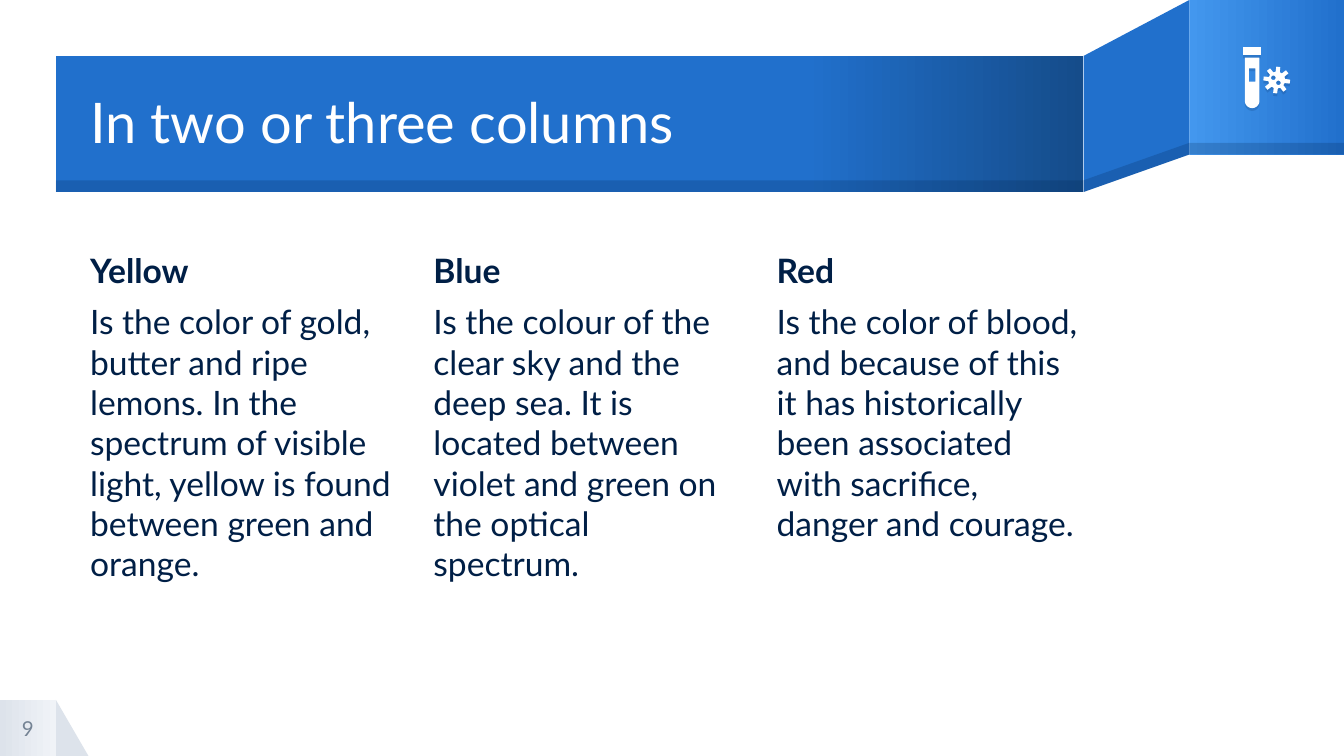
from math import cos, pi, sin

from lxml import etree
from pptx import Presentation
from pptx.dml.color import RGBColor
from pptx.enum.shapes import MSO_SHAPE
from pptx.enum.text import MSO_ANCHOR, PP_ALIGN
from pptx.oxml.ns import qn
from pptx.util import Inches, Pt

RECT, TRIANGLE = MSO_SHAPE.RECTANGLE, MSO_SHAPE.RIGHT_TRIANGLE
TOP, MIDDLE = MSO_ANCHOR.TOP, MSO_ANCHOR.MIDDLE
LEFT, CENTER = PP_ALIGN.LEFT, PP_ALIGN.CENTER

WHITE = RGBColor(0xFF, 0xFF, 0xFF)
NAVY = RGBColor(0x00, 0x1F, 0x46)
BLUE = RGBColor(0x21, 0x70, 0xCC)
LIGHT_BLUE = RGBColor(0x43, 0x97, 0xEE)
DARK_BLUE = RGBColor(0x15, 0x4C, 0x8A)
MIST = RGBColor(0xDD, 0xE3, 0xEB)
PALE_MIST = RGBColor(0xF0, 0xF3, 0xF7)
SLATE = RGBColor(0x74, 0x83, 0x94)

FONT = "Lato"
COLUMNS, ROWS = 24, 13.5
CELL = Inches(10) / COLUMNS

TOPICS = [
    ("Yellow", "Is the color of gold, butter and ripe lemons. In the spectrum of "
               "visible light, yellow is found between green and orange."),
    ("Blue", "Is the colour of the clear sky and the deep sea. It is located "
             "between violet and green on the optical spectrum."),
    ("Red", "Is the color of blood, and because of this it has historically been "
            "associated with sacrifice, danger and courage."),
]


def cells(count):
    return round(count * CELL)


def arc(x, y, radius, start=0, end=2 * pi, steps=24):
    """Points along a circle, angles running clockwise from the right."""
    angles = [start + (end - start) * i / steps for i in range(steps + 1)]
    return [(x + radius * cos(a), y + radius * sin(a)) for a in angles]


def box(left, top, right, bottom):
    return [(left, top), (right, top), (right, bottom), (left, bottom)]


def germ(x, y, outer, inner, spikes=8):
    """Outline of a disc with blunt spikes."""
    points = []
    for spike in range(spikes):
        middle = 2 * pi * spike / spikes + 0.12
        for radius, offset in ((inner, -0.25), (outer, -0.15),
                               (outer, 0.15), (inner, 0.25)):
            angle = middle + offset
            points.append((x + radius * cos(angle), y + radius * sin(angle)))
    return points


class SlideBuilder:
    """Draws on one slide; all lengths are in grid cells."""

    def __init__(self, slide):
        self.shapes = slide.shapes

    def paint(self, shape, color, opacity=100, shadow=False):
        """Fill with one colour, or with a list of (percent, colour) stops."""
        shape.line.fill.background()
        shape.shadow.inherit = False
        properties = shape._element.spPr
        if isinstance(color, list):
            shape.fill.gradient()
            shape.fill.gradient_angle = 0
            stops = properties.find(".//" + qn("a:gsLst"))
            for stop in list(stops):
                stops.remove(stop)
            for percent, stop_color in color:
                stop = etree.SubElement(stops, qn("a:gs"), pos=str(percent * 1000))
                etree.SubElement(stop, qn("a:srgbClr"), val=str(stop_color))
        else:
            shape.fill.solid()
            shape.fill.fore_color.rgb = color
        if opacity < 100:
            solid = properties.find(".//" + qn("a:srgbClr"))
            etree.SubElement(solid, qn("a:alpha"), val=str(opacity * 1000))
        if shadow:
            effects = properties.find(qn("a:effectLst"))
            outer = etree.SubElement(effects, qn("a:outerShdw"), dist=str(Pt(1.5)),
                                     dir="5400000", algn="bl", rotWithShape="0")
            tint = etree.SubElement(outer, qn("a:srgbClr"), val=str(NAVY))
            etree.SubElement(tint, qn("a:alpha"), val="15000")

    def preset(self, kind, left, top, width, height, color, **style):
        shape = self.shapes.add_shape(kind, *map(cells, (left, top, width, height)))
        self.paint(shape, color, **style)

    def outline(self, contours, color, **style):
        """One closed shape; contours after the first are holes."""
        scaled = [[(cells(x), cells(y)) for x, y in points] for points in contours]
        builder = self.shapes.build_freeform(*scaled[0][0])
        for index, points in enumerate(scaled):
            if index:
                builder.move_to(*points[0])
            builder.add_line_segments(points[1:], close=True)
        self.paint(builder.convert_to_shape(), color, **style)

    def text(self, left, top, width, height, lines, size, color, anchor=TOP,
             align=LEFT, before=0, spacing=1.0, bold_first=False):
        area = self.shapes.add_textbox(*map(cells, (left, top, width, height)))
        frame = area.text_frame
        frame.word_wrap = True
        frame.vertical_anchor = anchor
        frame.margin_left = frame.margin_right = 0
        frame.margin_top = frame.margin_bottom = 0
        frame.text = "\n".join(lines)
        for index, paragraph in enumerate(frame.paragraphs):
            paragraph.alignment = align
            paragraph.space_before = Pt(before)
            paragraph.line_spacing = spacing
            font = paragraph.font
            font.name, font.size, font.color.rgb = FONT, Pt(size), color
            font.bold = bold_first and index == 0


def draw_page_number(builder):
    top = ROWS - 1
    builder.preset(TRIANGLE, 1, top, 0.58, 1, MIST)
    builder.preset(RECT, 0, top, 1, 1, [(0, MIST), (100, PALE_MIST)])
    builder.text(0, top, 1, 1, ["9"], 11, SLATE, MIDDLE, CENTER)


def draw_ribbon(builder):
    fold, tab, tab_height, band_bottom = 19.35, 21.24, 2.76, 3.43
    edge = 0.21
    band_width, tab_width = fold - 1, COLUMNS - tab
    builder.outline([[(tab, 0), (fold, 1), (fold, band_bottom), (tab, tab_height)]],
                    BLUE)
    builder.preset(RECT, tab, 0, tab_width, tab_height,
                   [(0, LIGHT_BLUE), (100, BLUE)])
    builder.preset(RECT, 1, 1, band_width, band_bottom - 1,
                   [(0, BLUE), (73, BLUE), (100, DARK_BLUE)])
    builder.outline([[(tab, tab_height - edge), (fold, band_bottom - edge),
                      (fold, band_bottom), (tab, tab_height)]], NAVY, opacity=20)
    for left, bottom, width in ((tab, tab_height, tab_width),
                                (1, band_bottom, band_width)):
        builder.preset(RECT, left, bottom - edge, width, edge, NAVY, opacity=20)
    builder.text(1.61, 1.02, 17.74, 2.43, ["In two or three columns"], 30, WHITE,
                 MIDDLE, spacing=0.9)


def draw_icon(builder):
    cap = box(22.2, 0.84, 22.51, 0.99)
    tube = [(22.23, 1.03), (22.49, 1.03)] + arc(22.36, 1.8, 0.13, 0, pi)
    window = box(22.3, 1.22, 22.42, 1.46)
    body = germ(22.8, 1.43, 0.24, 0.15)
    spots = [arc(22.74, 1.39, 0.04), arc(22.83, 1.48, 0.04)]
    for contours in ([cap], [tube, window], [body, *spots]):
        builder.outline(contours, WHITE, shadow=True)


def main():
    deck = Presentation()
    deck.slide_width, deck.slide_height = cells(COLUMNS), cells(ROWS)
    builder = SlideBuilder(deck.slides.add_slide(deck.slide_layouts[6]))
    draw_page_number(builder)
    draw_ribbon(builder)
    for index, topic in enumerate(TOPICS):
        builder.text(1.61 + 6.13 * index, 4.46, 5.47, 7.13, topic, 18, NAVY,
                     before=6, bold_first=True)
    draw_icon(builder)
    deck.save("out.pptx")


if __name__ == "__main__":
    main()
